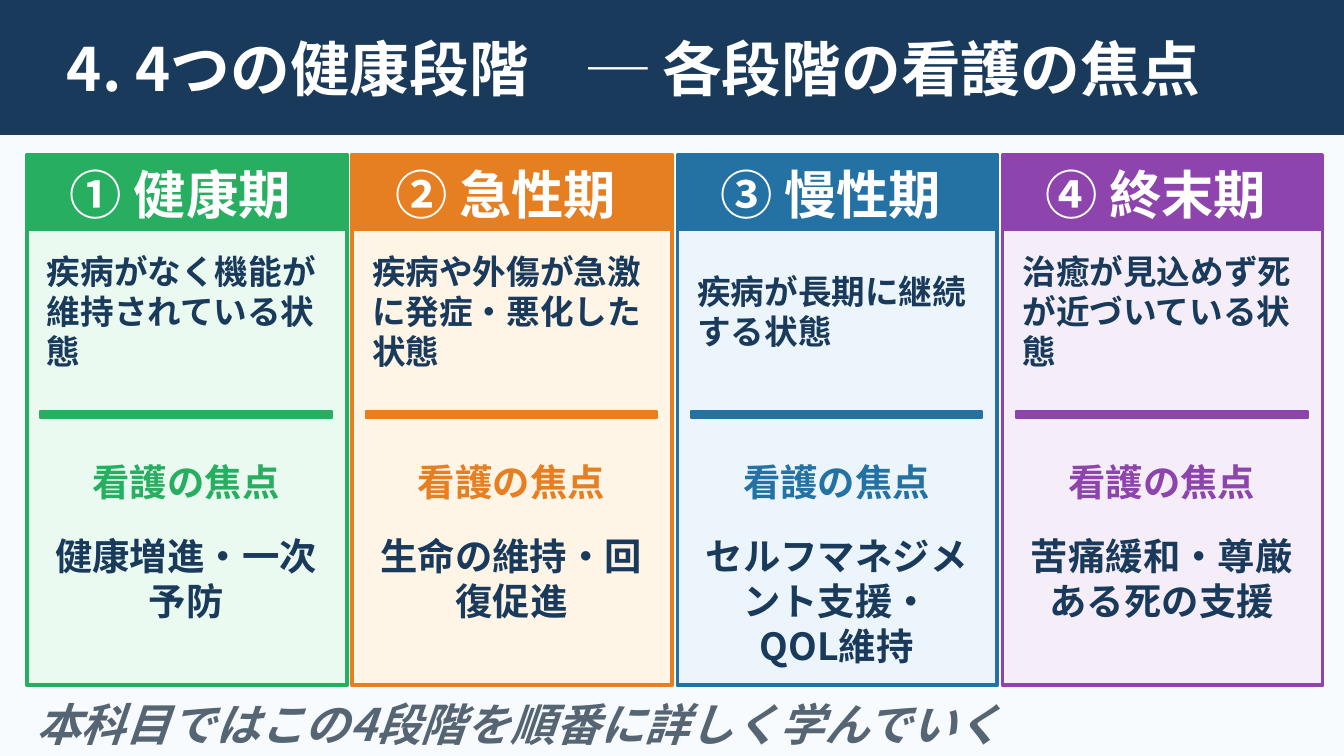
import dataclasses

import pptx
import pptx.util
import pptx.dml.color
import pptx.enum.shapes
import pptx.enum.text
import pptx.oxml.ns
from lxml import etree

Inches = pptx.util.Inches
Align = pptx.enum.text.PP_ALIGN
Anchor = pptx.enum.text.MSO_ANCHOR


@dataclasses.dataclass(frozen=True)
class Theme:
    font: str = "Noto Sans CJK JP"
    back: str = "F8FBFD"
    navy: str = "1A3A5C"
    white: str = "FFFFFF"
    gray: str = "566573"
    title: int = 32
    head: int = 28
    note: int = 24
    focus: int = 20
    body: int = 18


THEME = Theme()

# Heading, state, focus, main colour, pale colour
STAGES = [
    ("① 健康期", "疾病がなく機能が維持されている状態",
     "健康増進・一次予防", "27AE60", "EAFAF1"),
    ("② 急性期", "疾病や外傷が急激に発症・悪化した状態",
     "生命の維持・回復促進", "E67E22", "FEF5E7"),
    ("③ 慢性期", "疾病が長期に継続する状態",
     "セルフマネジメント支援・QOL維持", "2471A3", "EBF5FB"),
    ("④ 終末期", "治癒が見込めず死が近づいている状態",
     "苦痛緩和・尊厳ある死の支援", "8E44AD", "F5EEF8"),
]


def rgb(code):
    return pptx.dml.color.RGBColor.from_string(code)


def add_rect(slide, x, y, w, h, fill, line, width=1):
    rect = slide.shapes.add_shape(
        pptx.enum.shapes.MSO_SHAPE.RECTANGLE,
        Inches(x), Inches(y), Inches(w), Inches(h))
    rect.shadow.inherit = False
    rect.fill.solid()
    rect.fill.fore_color.rgb = rgb(fill)
    rect.line.color.rgb = rgb(line)
    rect.line.width = pptx.util.Pt(width)


def add_text(slide, text, x, y, w, h, *, size, color=THEME.navy,
             align=Align.LEFT, anchor=Anchor.MIDDLE, italic=False, flush=False):
    box = slide.shapes.add_textbox(Inches(x), Inches(y), Inches(w), Inches(h))
    frame = box.text_frame
    frame.word_wrap = True
    frame.vertical_anchor = anchor
    if flush:
        frame.margin_left = frame.margin_right = 0
        frame.margin_top = frame.margin_bottom = 0
    para = frame.paragraphs[0]
    para.alignment = align
    run = para.add_run()
    run.text = text
    font = run.font
    font.name = THEME.font
    font.size = pptx.util.Pt(size)
    font.bold = True
    font.italic = italic
    font.color.rgb = rgb(color)
    # Japanese glyphs take the East Asian typeface
    east = etree.SubElement(run._r.get_or_add_rPr(), pptx.oxml.ns.qn("a:ea"))
    east.set("typeface", THEME.font)


def add_title(slide, x, y, w, h):
    add_rect(slide, x, y, w, h, THEME.navy, THEME.navy)
    add_text(slide, "4. 4つの健康段階　─ 各段階の看護の焦点",
             x + 0.4, y + 0.15, w - 0.8, h - 0.3,
             size=THEME.title, color=THEME.white)


def add_stage(slide, stage, x, y, w, h):
    head, state, focus, main, pale = stage
    # Frame and heading band
    add_rect(slide, x, y, w, h, pale, main, 2)
    add_rect(slide, x, y, w, 0.56, main, main)
    add_text(slide, head, x - 0.05, y + 0.06, w, 0.46, size=THEME.head,
             color=THEME.white, align=Align.CENTER, flush=True)
    # State of health
    add_text(slide, state, x + 0.05, y + 0.66, w - 0.1, 1.01, size=THEME.body)
    # Rule and nursing focus
    left, wide = x + 0.1, w - 0.21
    add_rect(slide, left, y + 1.91, wide, 0.05, main, main)
    add_text(slide, "看護の焦点", left, y + 2.26, wide, 0.35,
             size=THEME.focus, color=main, align=Align.CENTER)
    add_text(slide, focus, left, y + 2.77, wide, 0.78, size=THEME.focus,
             align=Align.CENTER, anchor=Anchor.TOP)


def add_stages(slide, x, y, w, h, gap=0.04):
    wide = (w - gap * (len(STAGES) - 1)) / len(STAGES)
    for i, stage in enumerate(STAGES):
        add_stage(slide, stage, x + i * (wide + gap), y, wide, h)


def add_note(slide, x, y, w, h):
    add_text(slide, "本科目ではこの4段階を順番に詳しく学んでいく", x, y, w, h,
             size=THEME.note, color=THEME.gray, italic=True)


def main():
    deck = pptx.Presentation()
    # Wide slide, 16 to 9
    deck.slide_width = Inches(10)
    deck.slide_height = Inches(10 * 9 / 16)
    slide = deck.slides.add_slide(deck.slide_layouts[6])
    slide.background.fill.solid()
    slide.background.fill.fore_color.rgb = rgb(THEME.back)

    add_title(slide, 0, 0, 10, 1)
    add_stages(slide, 0.2, 1.15, 9.64, 3.95)
    add_note(slide, 0.17, 5.19, 9.38, 0.38)
    deck.save("out.pptx")


if __name__ == "__main__":
    main()
